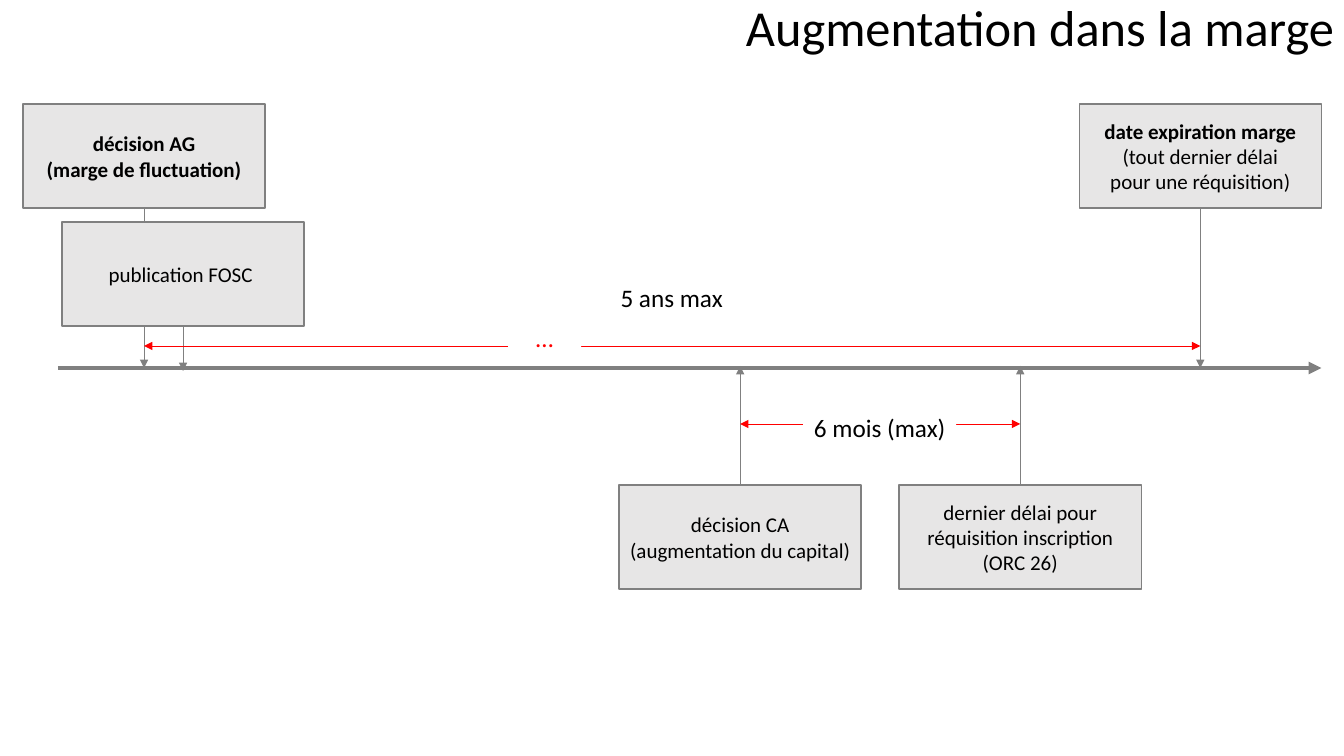
import pptx
import pptx.util
import pptx.dml.color
import pptx.enum.shapes
import pptx.enum.text
import pptx.oxml
import pptx.oxml.ns

Pt = pptx.util.Pt
Shape = pptx.enum.shapes.MSO_SHAPE
Anchor = pptx.enum.text.MSO_ANCHOR
Align = pptx.enum.text.PP_ALIGN


class Board:
    font = "Calibri"
    hues = {"ink": "000000", "paper": "FFFFFF", "box": "E7E6E6",
            "edge": "808080", "span": "FF0000"}
    scale = 914400 / 100.8
    wide, high = 242, 104

    def __init__(self, deck):
        layout = deck.slide_layouts.get_by_name("Title Only")
        self.slide = deck.slides.add_slide(layout)

    def emu(self, *sizes):
        return [round(size * self.scale) for size in sizes]

    def hue(self, name):
        return pptx.dml.color.RGBColor.from_string(self.hues[name])

    def fill_text(self, shape, paras, size, hue="ink", align=Align.CENTER,
                  anchor=Anchor.MIDDLE):
        frame = shape.text_frame
        frame.word_wrap = True
        frame.vertical_anchor = anchor
        for i, (text, bold) in enumerate(paras):
            para = frame.add_paragraph() if i else frame.paragraphs[0]
            para.alignment = align
            for j, line in enumerate(text.split("\n")):
                if j:
                    para.add_line_break()
                run = para.add_run()
                run.text = line
                run.font.name = self.font
                run.font.size = Pt(size)
                run.font.bold = bold
                run.font.color.rgb = self.hue(hue)

    def title(self, text, x, y, w, h):
        head = self.slide.shapes.title
        head.left, head.top, head.width, head.height = self.emu(x, y, w, h)
        self.fill_text(head, [(text, False)], 36, align=Align.RIGHT, anchor=Anchor.TOP)
        head.text_frame.paragraphs[0].line_spacing = 0.9

    def rect(self, x, y, w, h, fill):
        shape = self.slide.shapes.add_shape(Shape.RECTANGLE, *self.emu(x, y, w, h))
        shape.shadow.inherit = False
        shape.fill.solid()
        shape.fill.fore_color.rgb = self.hue(fill)
        shape.line.fill.background()
        return shape

    def label(self, text, x, y, w, h, hue="ink", anchor=Anchor.TOP):
        shape = self.rect(x, y, w, h, "paper")
        self.fill_text(shape, [(text, False)], 18, hue, anchor=anchor)

    def arrow(self, x1, y1, x2, y2, hue="edge", width=0.5, both=False):
        kind = pptx.enum.shapes.MSO_CONNECTOR.STRAIGHT
        line = self.slide.shapes.add_connector(kind, *self.emu(x1, y1, x2, y2))
        line.line.width = Pt(width)
        line.line.color.rgb = self.hue(hue)
        props = line._element.spPr
        space = pptx.oxml.ns.nsdecls("a")
        for end in ("headEnd", "tailEnd") if both else ("tailEnd",):
            tip = pptx.oxml.parse_xml(f'<a:{end} {space} type="triangle"/>')
            props.find(pptx.oxml.ns.qn("a:ln")).append(tip)
        props.append(pptx.oxml.parse_xml(f"<a:effectLst {space}/>"))
        return line

    def event(self, x, y, tip, *paras):
        box = self.rect(x, y, self.wide, self.high, "box")
        box.line.color.rgb = self.hue("edge")
        box.line.width = Pt(1)
        self.fill_text(box, paras, 15)
        mid = x + self.wide // 2
        below = tip > y
        start = y + self.high if below else y
        line = self.arrow(mid, start, mid, tip)
        line.begin_connect(box, 2 if below else 0)
        return mid


def main():
    deck = pptx.Presentation()
    deck.slide_width, deck.slide_height = pptx.util.Inches(13.33), pptx.util.Inches(7.5)
    board = Board(deck)
    axis = 368
    above, under = 104, 485
    board.title("Augmentation dans la marge", 76, -2, 1268, 108)
    board.arrow(58, axis, 1321, axis, width=3)
    start = board.event(23, above, axis, ("décision AG", True),
                        ("(marge de fluctuation)", True))
    board.event(62, 222, axis + 3, ("publication FOSC ", False))
    end = board.event(1079, above, axis, ("date expiration marge", True),
                      ("(tout dernier délai\npour une réquisition)", False))
    board.arrow(start, 346, end, 346, "span", both=True)
    board.label("5 ans max", 599, 277, 145, 40)
    start = board.event(619, under, axis - 2, ("décision CA", False),
                        ("(augmentation du capital)", False))
    end = board.event(899, under, axis - 2, ("dernier délai pour", False),
                      ("réquisition inscription (ORC 26)", False))
    board.arrow(start, 424, end, 424, "span", both=True)
    board.label("6 mois (max)", 803, 407, 153, 40)
    board.label("…", 508, 318, 73, 38, "span", Anchor.MIDDLE)
    deck.save("out.pptx")


if __name__ == "__main__":
    main()
